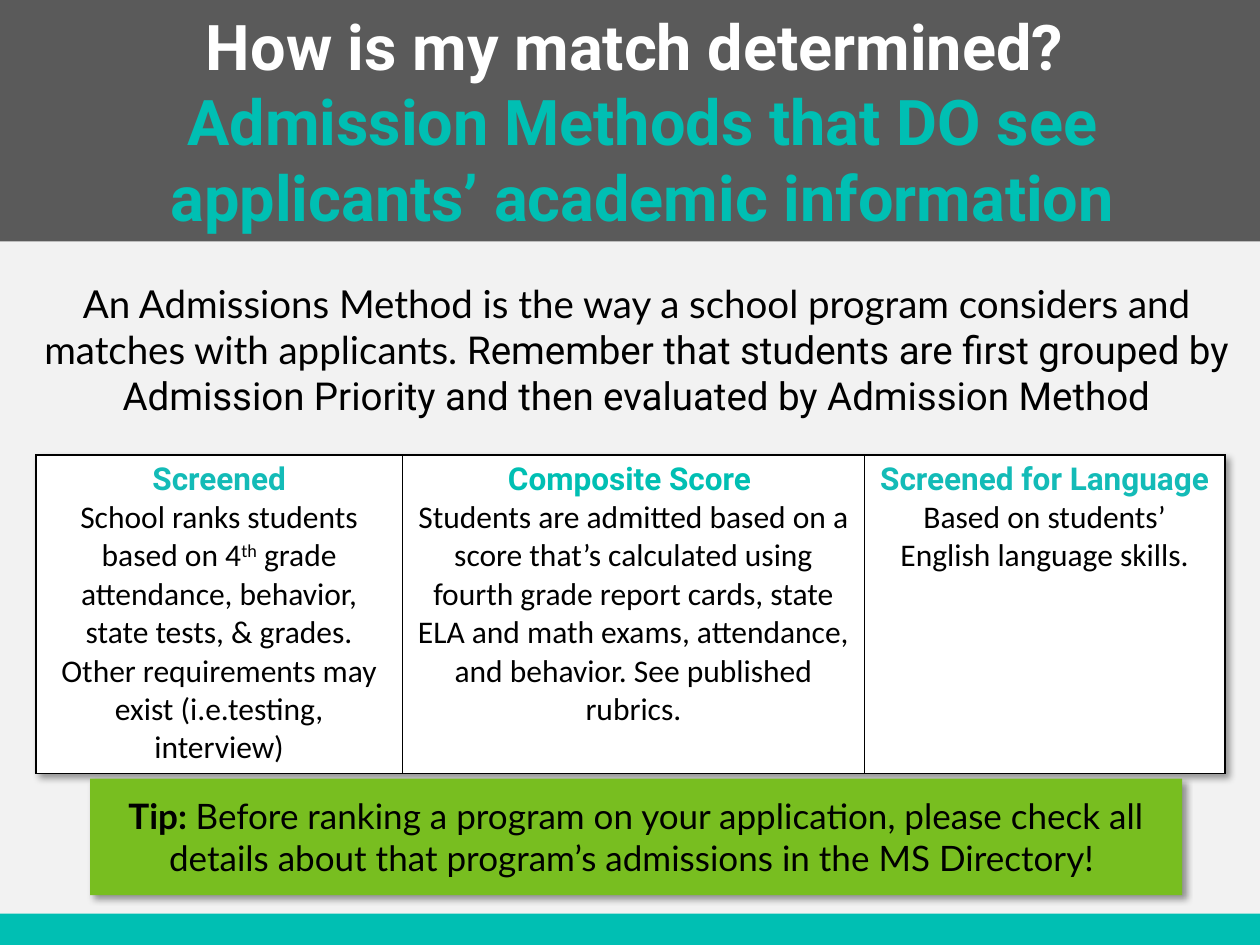
from lxml.etree import SubElement
from pptx import Presentation
from pptx.dml.color import RGBColor
from pptx.enum.shapes import MSO_SHAPE
from pptx.enum.text import MSO_ANCHOR, PP_ALIGN
from pptx.oxml.ns import qn
from pptx.util import Pt

WHITE = RGBColor(0xFF, 0xFF, 0xFF)
BLACK = RGBColor(0x00, 0x00, 0x00)
PALE_GRAY = RGBColor(0xF2, 0xF2, 0xF2)
DARK_GRAY = RGBColor(0x40, 0x40, 0x40)
TEAL = RGBColor(0x00, 0xBF, 0xB3)
SOFT_TEAL = RGBColor(0x13, 0xBB, 0xB7)
GREEN = RGBColor(0x78, 0xBE, 0x20)

SLIDE_WIDTH, SLIDE_HEIGHT = 720, 540
FOOTER_HEIGHT = 18

# Each method: name, heading colour, column width, description runs (text, superscript)
ADMISSION_METHODS = [
    ("Screened", SOFT_TEAL, 209.5, [
        ("School ranks students based on 4", False),
        ("th", True),
        (" grade attendance, behavior, state tests, & grades. "
         "Other requirements may exist (i.e.testing, interview)", False)]),
    ("Composite Score ", TEAL, 264, [
        ("Students are admitted based on a score that’s calculated using fourth "
         "grade report cards, state ELA and math exams, attendance, and behavior. "
         "See published rubrics.", False)]),
    ("Screened for Language", SOFT_TEAL, 206, [
        ("Based on students’ English language skills.", False)]),
]


class SlideBuilder:
    def __init__(self, presentation):
        self.slide = presentation.slides.add_slide(presentation.slide_layouts[6])
        background = self.slide.background.fill
        background.solid()
        background.fore_color.rgb = PALE_GRAY

    def rectangle(self, left, top, width, height, color, opacity=100,
                  anchor=MSO_ANCHOR.TOP):
        shape = self.slide.shapes.add_shape(
            MSO_SHAPE.RECTANGLE, Pt(left), Pt(top), Pt(width), Pt(height))
        shape.shadow.inherit = False
        shape.line.fill.background()
        shape.fill.solid()
        shape.fill.fore_color.rgb = color
        if opacity < 100:
            color_element = shape._element.spPr.find(".//" + qn("a:srgbClr"))
            SubElement(color_element, qn("a:alpha"), val=str(opacity * 1000))
        shape.text_frame.word_wrap = True
        shape.text_frame.vertical_anchor = anchor
        return shape

    def paragraph(self, text_frame, first=False):
        paragraph = text_frame.paragraphs[0] if first else text_frame.add_paragraph()
        paragraph.alignment = PP_ALIGN.CENTER
        return paragraph

    def run(self, paragraph, text, font, size, color=BLACK, bold=False,
            superscript=False):
        run = paragraph.add_run()
        run.text = text
        run.font.name = font
        run.font.size = Pt(size)
        run.font.bold = bold
        run.font.color.rgb = color
        if superscript:
            run.font._element.set("baseline", "30000")

    def drop_shadow(self, effects):
        """Fill an effect list with a soft shadow to the lower right."""
        shadow = SubElement(
            effects, qn("a:outerShdw"), blurRad=str(Pt(4)), dist=str(Pt(3)),
            dir=str(45 * 60000), algn="tl", rotWithShape="0")
        color = SubElement(shadow, qn("a:srgbClr"), val=str(BLACK))
        SubElement(color, qn("a:alpha"), val="40000")

    def cell_borders(self, cell):
        properties = cell._tc.get_or_add_tcPr()
        for side in ("lnL", "lnR", "lnT", "lnB"):
            line = SubElement(properties, qn("a:" + side), w=str(Pt(1)))
            fill = SubElement(line, qn("a:solidFill"))
            SubElement(fill, qn("a:srgbClr"), val=str(BLACK))

    def method_table(self, left, top, height, methods):
        width = sum(column_width for _, _, column_width, _ in methods)
        table = self.slide.shapes.add_table(
            1, len(methods), Pt(left), Pt(top), Pt(width), Pt(height)).table
        table.first_row = table.horz_banding = False
        properties = table._tbl.tblPr
        effects = SubElement(properties, qn("a:effectLst"))
        properties.insert(0, effects)
        self.drop_shadow(effects)
        for index, (name, color, column_width, description) in enumerate(methods):
            table.columns[index].width = Pt(column_width)
            cell = table.cell(0, index)
            self.cell_borders(cell)
            cell.fill.solid()
            cell.fill.fore_color.rgb = WHITE
            heading = self.paragraph(cell.text_frame, first=True)
            self.run(heading, name, "Roboto", 18, color, bold=True)
            body = self.paragraph(cell.text_frame)
            for text, superscript in description:
                self.run(body, text, "Calibri", 18, superscript=superscript)


def main():
    presentation = Presentation()
    presentation.slide_width = Pt(SLIDE_WIDTH)
    presentation.slide_height = Pt(SLIDE_HEIGHT)
    builder = SlideBuilder(presentation)

    header = builder.rectangle(0, 0, SLIDE_WIDTH, 138, DARK_GRAY, opacity=85,
                               anchor=MSO_ANCHOR.MIDDLE)
    header.text_frame.margin_left = Pt(21.6)
    title = builder.paragraph(header.text_frame, first=True)
    builder.run(title, "How is my match determined? ", "Roboto", 36, WHITE, bold=True)
    subtitle = builder.paragraph(header.text_frame)
    builder.run(subtitle, "Admission Methods that DO see applicants’ academic information",
                "Roboto", 36, TEAL, bold=True)

    introduction = builder.rectangle(13.5, 156.5, 700.5, 87, PALE_GRAY)
    definition = builder.paragraph(introduction.text_frame, first=True)
    definition.space_after = Pt(6)
    builder.run(definition, "An Admissions Method is the way a school program considers "
                "and matches with applicants. ", "Lato", 22)
    builder.run(definition, "Remember that students are first grouped by Admission "
                "Priority and then evaluated by Admission Method", "Roboto", 22)

    builder.method_table(20.5, 260, 180, ADMISSION_METHODS)

    tip_box = builder.rectangle(51.5, 445, 624, 66.5, GREEN, anchor=MSO_ANCHOR.MIDDLE)
    builder.drop_shadow(tip_box._element.spPr.find(qn("a:effectLst")))
    tip = builder.paragraph(tip_box.text_frame, first=True)
    tip.space_before = Pt(7)
    builder.run(tip, "Tip: ", "Lato", 20, bold=True)
    builder.run(tip, "Before ranking a program on your application, please check all "
                "details about that program’s admissions in the MS Directory! ", "Lato", 20)

    builder.rectangle(0, SLIDE_HEIGHT - FOOTER_HEIGHT, SLIDE_WIDTH, FOOTER_HEIGHT, TEAL)
    presentation.save("out.pptx")


if __name__ == "__main__":
    main()
